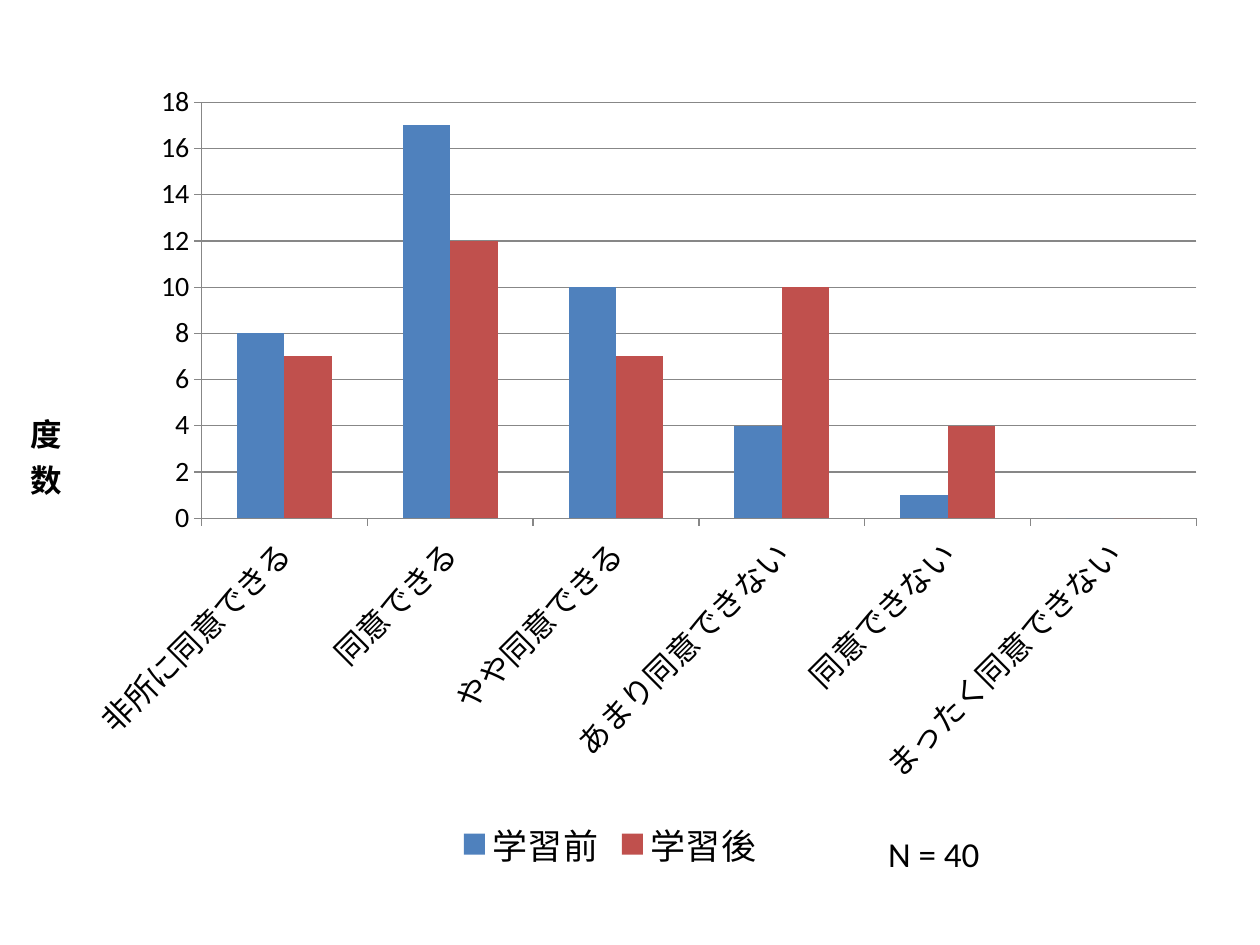
"""Build a slide that compares answers before and after study."""
from dataclasses import dataclass

from lxml.etree import SubElement as Sub
from pptx import Presentation
from pptx.chart.data import CategoryChartData as Data
from pptx.dml.color import RGBColor
from pptx.enum.chart import XL_CHART_TYPE as Kind
from pptx.enum.chart import XL_LEGEND_POSITION as Spot
from pptx.enum.chart import XL_TICK_MARK as Tick
from pptx.enum.text import MSO_AUTO_SIZE as Fit
from pptx.oxml.ns import qn
from pptx.util import Inches, Pt


@dataclass
class Group:
    name: str
    vals: tuple[int, ...]
    color: str


@dataclass
class Box:
    x: float
    y: float
    w: float
    h: float

    def place(self) -> list:
        return [Inches(n) for n in (self.x, self.y, self.w, self.h)]


CATS = ("非所に同意できる", "同意できる", "やや同意できる",
        "あまり同意できない", "同意できない", "まったく同意できない")
GROUPS = (Group("学習前", (8, 17, 10, 4, 1, 0), "4F81BD"),
          Group("学習後", (7, 12, 7, 10, 4, 0), "C0504D"))
FRAME = Box(0, 0.55, 9.69, 6.41)
PLOT = Box(1.6, 0.81, 7.9, 3.3)
NOTE = Box(6.95, 6.56, 0.93, 0.44)
GRAY = "878787"


def put(item, vals: dict) -> None:
    """Set each named attribute of an item."""
    for key, val in vals.items():
        setattr(item, key, val)


def tint(form, color: str) -> None:
    """Give a fill or a line one solid colour."""
    getattr(form, "solid", lambda: None)()
    target = form.fore_color if hasattr(form, "fore_color") else form.color
    target.rgb = RGBColor.from_string(color)


def style(font, size: float, bold: bool = False) -> None:
    """Set the size, weight, face and colour of a font."""
    put(font, {"size": Pt(size), "bold": bold, "name": "Calibri"})
    font.color.rgb = RGBColor.from_string("000000")


def fix(node, vals: dict) -> None:
    """Pin a chart part to a place given in shares of the chart."""
    lay = node.find(qn("c:layout"))
    if lay is None:
        lay = Sub(node, qn("c:layout"))
        node.insert(0, lay)
    man = Sub(lay, qn("c:manualLayout"))
    for key, val in vals.items():
        Sub(man, qn(f"c:{key}")).set("val", str(val))


def rule(line) -> None:
    """Draw a thin grey line."""
    line.width = Pt(0.75)
    tint(line, GRAY)


def add_axes(chart) -> None:
    """Format both axes and the upright title."""
    cat, val = chart.category_axis, chart.value_axis
    for axis, size in ((cat, 18), (val, 16)):
        axis.major_tick_mark = Tick.OUTSIDE
        style(axis.tick_labels.font, size)
        rule(axis.format.line)
    cat.tick_labels.font._element.getparent().getparent().getparent().find(
        qn("a:bodyPr")).set("rot", "-2700000")
    put(val, {"minimum_scale": 0, "maximum_scale": 18, "major_unit": 2,
              "has_major_gridlines": True, "has_title": True})
    rule(val.major_gridlines.format.line)
    title = val.axis_title
    text = title.text_frame
    text.text = "度数"
    style(text.paragraphs[0].runs[0].font, 18, True)
    put(text, {"word_wrap": True})
    body = text._txBody.find(qn("a:bodyPr"))
    for key, setting in {"rot": "0", "vert": "wordArtVertRtl"}.items():
        body.set(key, setting)
    fix(title._element, {"xMode": "edge", "yMode": "edge",
                         "x": 0.02, "y": 0.41})


def add_bars(slide) -> None:
    """Add the column chart with its legend."""
    data = Data()
    data.categories = CATS
    for group in GROUPS:
        data.add_series(group.name, group.vals)
    chart = slide.shapes.add_chart(
        Kind.COLUMN_CLUSTERED, *FRAME.place(), data).chart
    style(chart.font, 10)
    put(chart, {"has_title": False, "has_legend": True})
    put(chart.legend, {"position": Spot.BOTTOM, "include_in_layout": False})
    style(chart.legend.font, 20)
    plot = chart.plots[0]
    put(plot, {"gap_width": 150, "overlap": 0, "vary_by_categories": False})
    for bars, group in zip(plot.series, GROUPS):
        tint(bars.format.fill, group.color)
    add_axes(chart)
    fix(chart._chartSpace.chart.plotArea, {
        "layoutTarget": "inner", "xMode": "edge", "yMode": "edge",
        "x": round((PLOT.x - FRAME.x) / FRAME.w, 3),
        "y": round((PLOT.y - FRAME.y) / FRAME.h, 3),
        "w": round(PLOT.w / FRAME.w, 3),
        "h": round(PLOT.h / FRAME.h, 3)})


def add_note(slide) -> None:
    """Add the sample size."""
    text = slide.shapes.add_textbox(*NOTE.place()).text_frame
    put(text, {"text": "N = 40", "word_wrap": False,
               "auto_size": Fit.SHAPE_TO_FIT_TEXT})
    style(text.paragraphs[0].runs[0].font, 20)


def main() -> None:
    """Build and save the slide."""
    deck = Presentation()
    put(deck, {"slide_width": Inches(10), "slide_height": Inches(7.5)})
    slide = deck.slides.add_slide(deck.slide_layouts[6])
    add_bars(slide)
    add_note(slide)
    deck.save("out.pptx")


if __name__ == "__main__":
    main()
